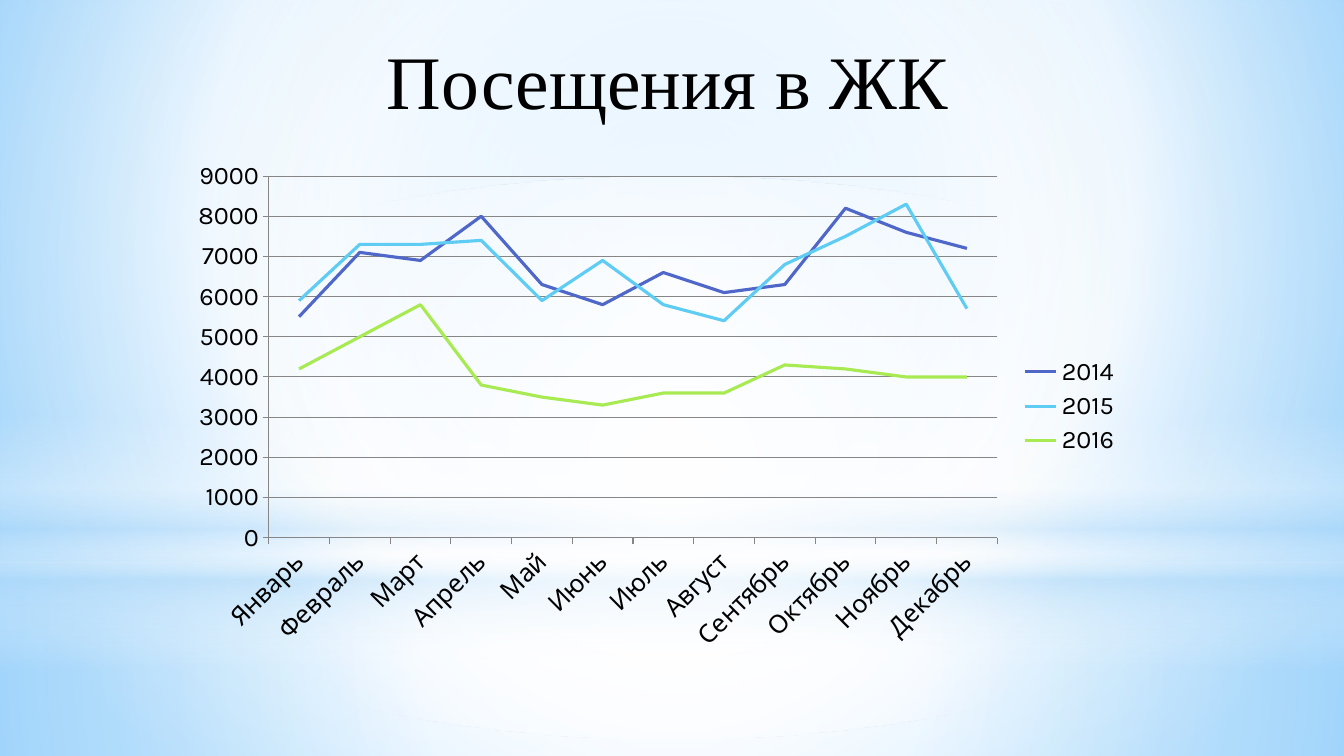
import pptx
import pptx.chart.data
import pptx.dml.color
import pptx.enum.chart
import pptx.enum.shapes
import pptx.enum.text
import pptx.oxml
import pptx.oxml.ns
import pptx.util
from pptx.util import Cm

SLIDE_WIDTH, SLIDE_HEIGHT = Cm(33.87), Cm(19.05)
BLACK, GRID_GREY, WHITE, PALE_BLUE = "000000", "868686", "FFFFFF", "B4DCFA"
CENTRE = (50, 50, 50, 50)

MONTHS = ["Январь", "Февраль", "Март", "Апрель", "Май", "Июнь", "Июль",
          "Август", "Сентябрь", "Октябрь", "Ноябрь", "Декабрь"]
VISITS = {
    "2014": ("4E67C8", [5500, 7100, 6900, 8000, 6300, 5800, 6600, 6100, 6300, 8200, 7600, 7200]),
    "2015": ("5ECCF3", [5900, 7300, 7300, 7400, 5900, 6900, 5800, 5400, 6800, 7500, 8300, 5700]),
    "2016": ("A7EA52", [4200, 5000, 5800, 3800, 3500, 3300, 3600, 3600, 4300, 4200, 4000, 4000]),
}


def color(hex_string):
    return pptx.dml.color.RGBColor.from_string(hex_string)


def set_gradient(fill, element, stops, focus=None):
    """Stops are (position, colour, opacity) in percent; without a focus
    rectangle the gradient runs from top to bottom."""
    fill.gradient()
    gradient = element.xpath(".//a:gradFill")[0]
    stop_xml = "".join(
        f'<a:gs pos="{position * 1000}"><a:srgbClr val="{color(shade)}">'
        f'<a:alpha val="{opacity * 1000}"/></a:srgbClr></a:gs>'
        for position, shade, opacity in stops)
    if focus:
        left, top, right, bottom = (1000 * edge for edge in focus)
        direction = (f'<a:path path="circle"><a:fillToRect l="{left}" t="{top}" '
                     f'r="{right}" b="{bottom}"/></a:path>')
    else:
        direction = '<a:lin ang="5400000" scaled="0"/>'
    replacement = pptx.oxml.parse_xml(
        f'<a:gradFill {pptx.oxml.ns.nsdecls("a")} rotWithShape="1">'
        f'<a:gsLst>{stop_xml}</a:gsLst>{direction}</a:gradFill>')
    gradient.getparent().replace(gradient, replacement)


def add_backdrop(slide, width, height):
    """Lay the glow and the horizon behind the title."""
    set_gradient(slide.background.fill, slide.element,
                 [(0, "9ED5FF", 100), (60, WHITE, 100), (100, "5BB9FF", 100)],
                 (20, 10, 20, 60))
    horizon = Cm(14.17)
    rectangle = pptx.enum.shapes.MSO_SHAPE.RECTANGLE
    oval = pptx.enum.shapes.MSO_SHAPE.OVAL
    layers = [
        (rectangle, horizon, height - horizon,
         [(0, WHITE, 91), (37, WHITE, 76), (100, PALE_BLUE, 79)], CENTRE),
        (rectangle, 0, horizon,
         [(0, WHITE, 89), (48, WHITE, 62), (100, PALE_BLUE, 79)], CENTRE),
        (rectangle, Cm(10.46), Cm(6.35),
         [(0, WHITE, 0), (29, WHITE, 30), (45, PALE_BLUE, 40),
          (55, WHITE, 26), (65, PALE_BLUE, 60), (100, WHITE, 0)], None),
        (oval, Cm(4.45), horizon, [(0, WHITE, 100), (56, WHITE, 0)], CENTRE),
    ]
    for kind, top, layer_height, stops, focus in layers:
        layer = slide.shapes.add_shape(kind, 0, top, width, layer_height)
        layer.shadow.inherit = False
        layer.line.fill.background()
        set_gradient(layer.fill, layer.element, stops, focus)
        slide.shapes.title.element.addprevious(layer.element)


def fill_title(title, text, left, top, width, height):
    title.left, title.top, title.width, title.height = left, top, width, height
    frame = title.text_frame
    frame.text = text
    frame.word_wrap = True
    frame.auto_size = pptx.enum.text.MSO_AUTO_SIZE.NONE
    frame.vertical_anchor = pptx.enum.text.MSO_ANCHOR.MIDDLE
    paragraph = frame.paragraphs[0]
    paragraph.alignment = pptx.enum.text.PP_ALIGN.CENTER
    paragraph.font.name = "Times New Roman"
    paragraph.font.size = pptx.util.Pt(54)
    paragraph.font.color.rgb = color(BLACK)


def style_line(line, shade, points):
    line.color.rgb = color(shade)
    line.width = pptx.util.Pt(points)


def add_visits_chart(slide, left, top, width, height):
    chart_data = pptx.chart.data.CategoryChartData()
    chart_data.categories = MONTHS
    for year, (_, visits) in VISITS.items():
        chart_data.add_series(year, visits)
    chart = slide.shapes.add_chart(pptx.enum.chart.XL_CHART_TYPE.LINE,
                                   left, top, width, height, chart_data).chart
    chart.has_title = False
    chart.font.name = "Karla"
    chart.font.size = pptx.util.Pt(18)
    chart.font.color.rgb = color(BLACK)
    chart.has_legend = True
    chart.legend.position = pptx.enum.chart.XL_LEGEND_POSITION.RIGHT
    chart.legend.include_in_layout = False

    for axis in (chart.category_axis, chart.value_axis):
        axis.major_tick_mark = pptx.enum.chart.XL_TICK_MARK.OUTSIDE
        axis.minor_tick_mark = pptx.enum.chart.XL_TICK_MARK.NONE
        style_line(axis.format.line, GRID_GREY, 0.75)
    chart.value_axis.minimum_scale = 0
    chart.value_axis.maximum_scale = 9000
    chart.value_axis.major_unit = 1000
    chart.value_axis.has_major_gridlines = True
    style_line(chart.value_axis.major_gridlines.format.line, GRID_GREY, 0.75)

    plot = chart.plots[0]
    plot.vary_by_categories = False
    for series, (shade, _) in zip(plot.series, VISITS.values()):
        series.smooth = False
        series.marker.style = pptx.enum.chart.XL_MARKER_STYLE.NONE
        style_line(series.format.line, shade, 2.25)


def build_chart_slide(presentation):
    slide = presentation.slides.add_slide(presentation.slide_layouts[5])
    add_backdrop(slide, presentation.slide_width, presentation.slide_height)
    fill_title(slide.shapes.title, "Посещения в ЖК",
               Cm(2.46), Cm(1.22), Cm(28.73), Cm(1.57))
    add_visits_chart(slide, Cm(4.52), Cm(3.81), Cm(23.98), Cm(12.85))


def main():
    presentation = pptx.Presentation()
    presentation.slide_width = SLIDE_WIDTH
    presentation.slide_height = SLIDE_HEIGHT
    build_chart_slide(presentation)
    presentation.save("out.pptx")


if __name__ == "__main__":
    main()
